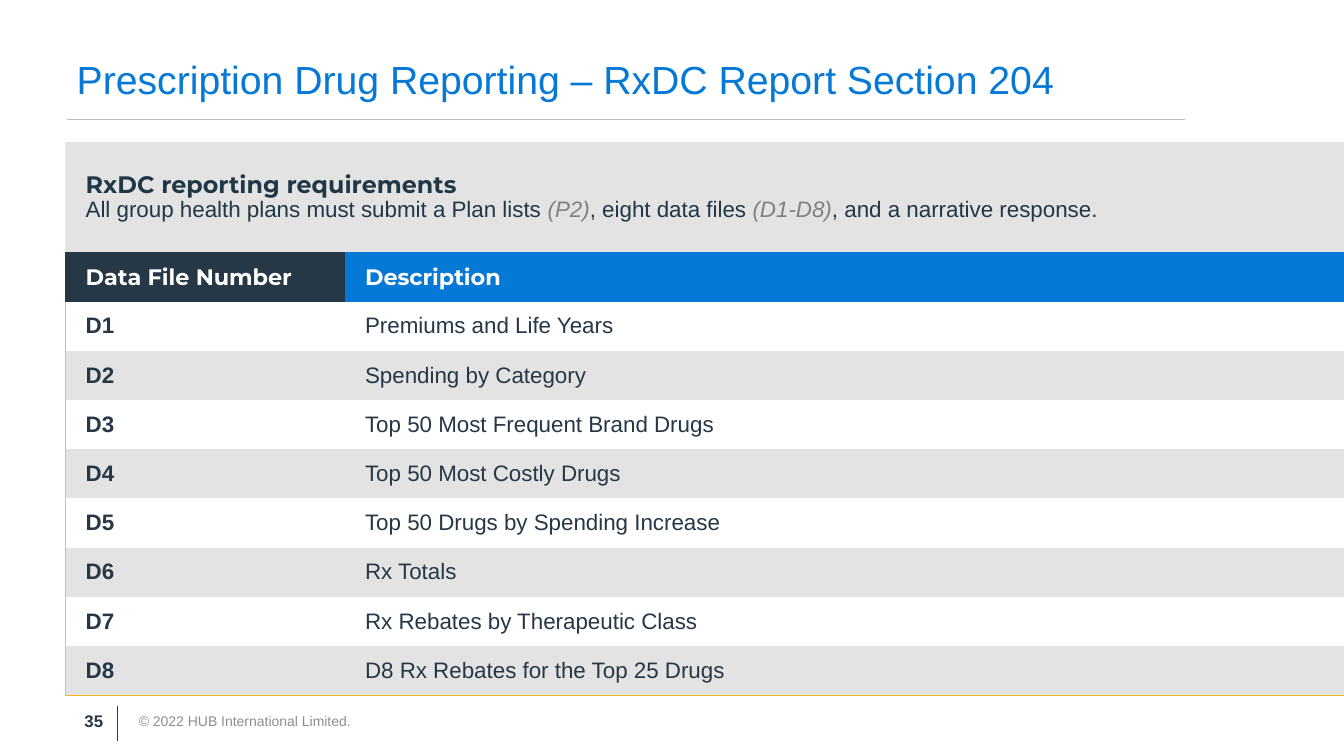
from lxml import etree
from pptx import Presentation
from pptx.dml.color import RGBColor
from pptx.enum.shapes import MSO_CONNECTOR, MSO_SHAPE
from pptx.enum.text import MSO_ANCHOR, MSO_AUTO_SIZE, PP_ALIGN
from pptx.oxml.ns import qn
from pptx.util import Cm, Pt

MIDDLE = MSO_ANCHOR.MIDDLE
LEFT = PP_ALIGN.LEFT
RECTANGLE = MSO_SHAPE.RECTANGLE
STRAIGHT = MSO_CONNECTOR.STRAIGHT
NO_AUTOFIT = MSO_AUTO_SIZE.NONE

BODY_FONT = "Arial"
HEADING_FONT = "Montserrat"
COLORS = {
    "blue": "0678D5",
    "navy": "263746",
    "ink": "203747",
    "band": "E3E3E3",
    "white": "FFFFFF",
    "muted": "808080",
    "footer": "8D8D94",
    "rule": "BFBFBF",
    "gold": "F3B921",
}

TITLE = "Prescription Drug Reporting – RxDC Report Section 204"
INTRO_HEADING = "RxDC reporting requirements"
INTRO = [
    ("All group health plans must submit a Plan lists ", False),
    ("(P2)", True),
    (", eight data files ", False),
    ("(D1-D8)", True),
    (", and a narrative response.", False),
]
HEADER = ("Data File Number", "Description")
DATA_FILES = [
    ("D1", "Premiums and Life Years"),
    ("D2", "Spending by Category"),
    ("D3", "Top 50 Most Frequent Brand Drugs"),
    ("D4", "Top 50 Most Costly Drugs"),
    ("D5", "Top 50 Drugs by Spending Increase"),
    ("D6", "Rx Totals"),
    ("D7", "Rx Rebates by Therapeutic Class"),
    ("D8", "D8 Rx Rebates for the Top 25 Drugs"),
]
PAGE_NUMBER = "35"
COPYRIGHT = "© 2022 HUB International Limited."

SLIDE_WIDTH, SLIDE_HEIGHT = 33.87, 19.05
CONTENT_LEFT = 1.65
CONTENT_WIDTH = SLIDE_WIDTH - CONTENT_LEFT
INTRO_TOP, INTRO_HEIGHT = 3.58, 2.79
TABLE_TOP, ROW_HEIGHT = 6.36, 1.24
NUMBER_WIDTH = 7.04
TEXT_INDENT = 0.51
TITLE_LEFT, TITLE_TOP, TITLE_WIDTH, TITLE_HEIGHT = 1.68, 1.14, 28.19, 1.86
FOOTER_TOP, FOOTER_HEIGHT = 17.65, 1.02


def rgb(name):
    return RGBColor.from_string(COLORS[name])


def add_run(paragraph, text, size, color, font=BODY_FONT, bold=False, italic=False):
    run = paragraph.add_run()
    run.text = text
    run.font.name = font
    run.font.size = Pt(size)
    run.font.bold = bold
    run.font.italic = italic
    run.font.color.rgb = rgb(color)


def add_rule(slide, x1, y1, x2, y2, color):
    rule = slide.shapes.add_connector(STRAIGHT, Cm(x1), Cm(y1), Cm(x2), Cm(y2))
    rule.line.color.rgb = rgb(color)
    rule.line.width = Pt(0.5)
    etree.SubElement(rule._element.spPr, qn("a:effectLst"))


def add_footer_text(slide, left, width, text, size, color, bold):
    box = slide.shapes.add_textbox(Cm(left), Cm(FOOTER_TOP), Cm(width), Cm(FOOTER_HEIGHT))
    box.text_frame.word_wrap = True
    box.text_frame.vertical_anchor = MIDDLE
    add_run(box.text_frame.paragraphs[0], text, size, color, bold=bold)


def set_borders(cell, colors):
    properties = cell._tc.get_or_add_tcPr()
    for position, side in enumerate(("lnL", "lnR", "lnT", "lnB")):
        border = etree.Element(qn("a:" + side), w=str(Pt(1)))
        if side in colors:
            fill = etree.SubElement(border, qn("a:solidFill"))
            etree.SubElement(fill, qn("a:srgbClr"), val=COLORS[colors[side]])
        else:
            etree.SubElement(border, qn("a:noFill"))
        properties.insert(position, border)


def add_title(slide):
    title = slide.shapes.title
    title.left, title.top = Cm(TITLE_LEFT), Cm(TITLE_TOP)
    title.width, title.height = Cm(TITLE_WIDTH), Cm(TITLE_HEIGHT)
    title.text_frame.auto_size = NO_AUTOFIT
    title.text_frame.vertical_anchor = MIDDLE
    paragraph = title.text_frame.paragraphs[0]
    paragraph.alignment = LEFT
    paragraph.line_spacing = 0.9
    add_run(paragraph, TITLE, 28, "blue")
    rule_y = TITLE_TOP + TITLE_HEIGHT
    add_rule(slide, TITLE_LEFT, rule_y, TITLE_LEFT + TITLE_WIDTH, rule_y, "rule")


def add_intro(slide):
    intro = slide.shapes.add_shape(
        RECTANGLE, Cm(CONTENT_LEFT), Cm(INTRO_TOP), Cm(CONTENT_WIDTH), Cm(INTRO_HEIGHT))
    intro.shadow.inherit = False
    intro.fill.solid()
    intro.fill.fore_color.rgb = rgb("band")
    intro.line.fill.background()
    frame = intro.text_frame
    frame.word_wrap = True
    frame.vertical_anchor = MIDDLE
    frame.margin_left = Cm(TEXT_INDENT)
    paragraph = frame.paragraphs[0]
    paragraph.alignment = LEFT
    paragraph.line_spacing = 0.9
    add_run(paragraph, INTRO_HEADING, 17, "ink", HEADING_FONT, bold=True)
    paragraph.add_line_break()
    for text, is_file_code in INTRO:
        add_run(paragraph, text, 16, "muted" if is_file_code else "ink", italic=is_file_code)


def add_data_files(slide):
    rows = [HEADER] + DATA_FILES
    table = slide.shapes.add_table(
        len(rows), len(HEADER), Cm(CONTENT_LEFT), Cm(TABLE_TOP),
        Cm(CONTENT_WIDTH), Cm(ROW_HEIGHT * len(rows))).table
    table.horz_banding = False
    table.columns[0].width = Cm(NUMBER_WIDTH)
    table.columns[1].width = Cm(CONTENT_WIDTH - NUMBER_WIDTH)
    for row, texts in enumerate(rows):
        table.rows[row].height = Cm(ROW_HEIGHT)
        for column, text in enumerate(texts):
            cell = table.cell(row, column)
            cell.vertical_anchor = MIDDLE
            cell.margin_left = Cm(TEXT_INDENT)
            cell.margin_right = cell.margin_top = cell.margin_bottom = Cm(0.25)
            borders = {}
            if row == 0:
                fill = ("navy", "blue")[column]
                font, color = HEADING_FONT, "white"
            else:
                fill = "white" if row % 2 else "band"
                font, color = BODY_FONT, "navy"
                if column == 0:
                    borders["lnL"] = "rule"
                if row == len(DATA_FILES):
                    borders["lnB"] = "gold"
            cell.fill.solid()
            cell.fill.fore_color.rgb = rgb(fill)
            set_borders(cell, borders)
            add_run(cell.text_frame.paragraphs[0], text, 16, color, font,
                    bold=row == 0 or column == 0)


def add_footer(slide):
    add_rule(slide, 2.96, FOOTER_TOP + 0.13, 2.96, FOOTER_TOP + FOOTER_HEIGHT, "navy")
    add_footer_text(slide, 1.88, 1.3, PAGE_NUMBER, 12, "navy", True)
    add_footer_text(slide, 3.25, 11.43, COPYRIGHT, 10, "footer", False)


def main():
    deck = Presentation()
    deck.slide_width, deck.slide_height = Cm(SLIDE_WIDTH), Cm(SLIDE_HEIGHT)
    slide = deck.slides.add_slide(deck.slide_layouts[5])
    add_title(slide)
    add_intro(slide)
    add_data_files(slide)
    add_footer(slide)
    deck.save("out.pptx")


if __name__ == "__main__":
    main()
